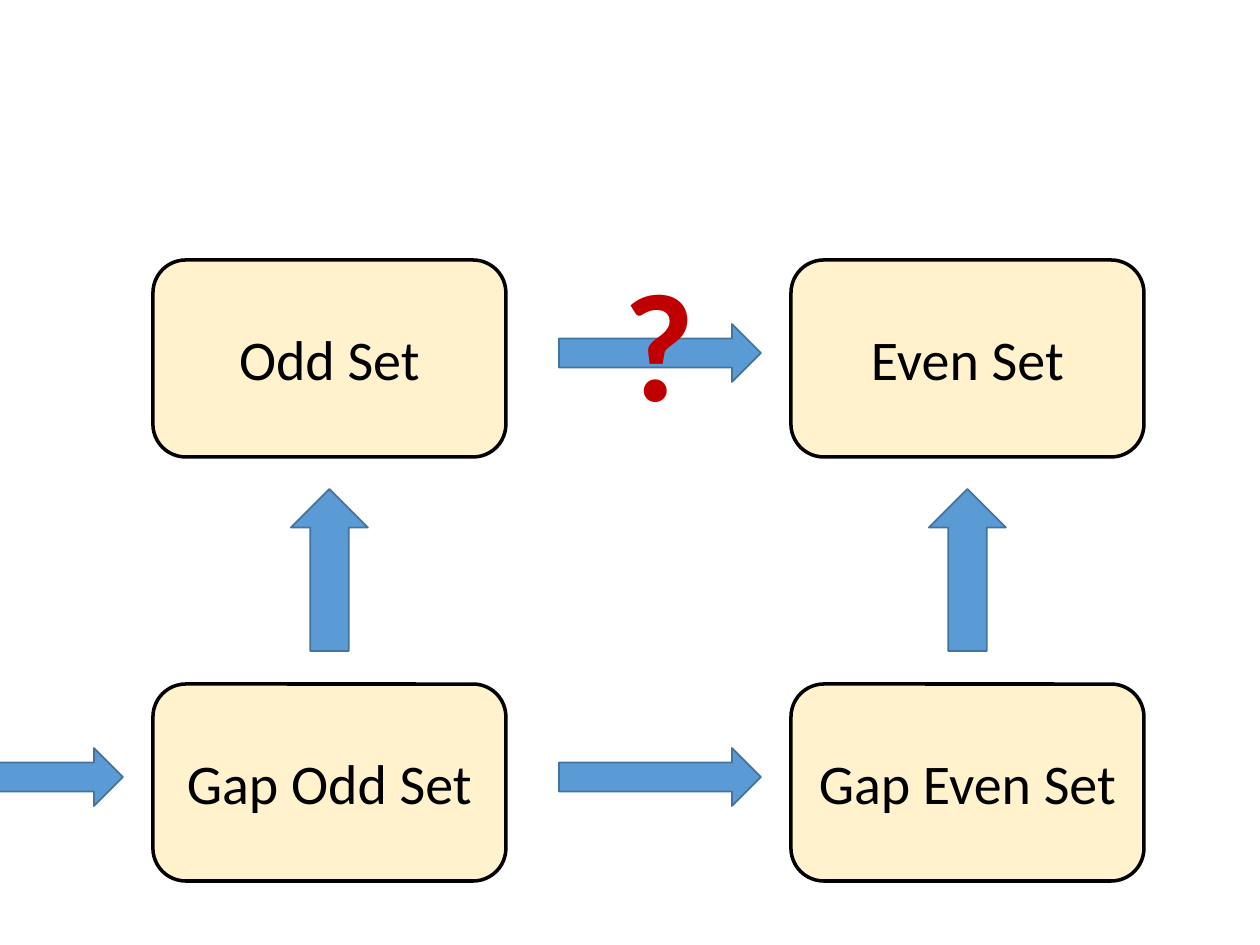
from dataclasses import dataclass

from pptx import Presentation
from pptx.dml.color import RGBColor as Rgb
from pptx.enum.shapes import MSO_SHAPE as Kind
from pptx.enum.text import MSO_ANCHOR as Anchor, MSO_AUTO_SIZE as Fit, PP_ALIGN as Align
from pptx.shapes.autoshape import Shape
from pptx.slide import Slide
from pptx.util import Emu, Pt

SCALE = 914400 / 126  # EMU in one px
STEP_X, STEP_Y = 638, 424


@dataclass(frozen=True)
class Theme:
    font: str = "Calibri"
    box: str = "FFF2CC"
    edge: str = "000000"
    ink: str = "000000"
    arrow: str = "5B9BD5"
    rim: str = "43739E"
    alert: str = "C00000"
    label: int = 32
    mark: int = 88


@dataclass(frozen=True)
class Rect:
    x: int
    y: int
    w: int
    h: int

    def at(self, col: int, row: int) -> "Rect":
        """Shift by whole grid steps."""
        return Rect(self.x + col * STEP_X, self.y + row * STEP_Y, self.w, self.h)

    def emu(self) -> list[Emu]:
        return [Emu(round(v * SCALE)) for v in (self.x, self.y, self.w, self.h)]


@dataclass(frozen=True)
class Node:
    text: str
    col: int
    row: int


THEME = Theme()
BOX = Rect(153, 260, 353, 197)
ACROSS = Rect(559, 324, 202, 58)
UP = Rect(291, 489, 77, 162)
MARK = Rect(611, 241, 97, 199)

NODES = (
    Node("Odd Set", 0, 0),
    Node("Even Set", 1, 0),
    Node("Gap Odd Set", 0, 1),
    Node("Gap Even Set", 1, 1),
)


def add_run(shape: Shape, text: str, size: int, color: str, bold: bool = False) -> None:
    run = shape.text_frame.paragraphs[0].add_run()
    run.text = text
    font = run.font
    font.name, font.size, font.bold = THEME.font, Pt(size), bold
    font.color.rgb = Rgb.from_string(color)


def add_form(slide: Slide, kind: Kind, rect: Rect, fill: str, line: str, width: int) -> Shape:
    form = slide.shapes.add_shape(kind, *rect.emu())
    form.shadow.inherit = False
    form.fill.solid()
    form.fill.fore_color.rgb = Rgb.from_string(fill)
    form.line.color.rgb = Rgb.from_string(line)
    form.line.width = Pt(width)
    return form


def add_node(slide: Slide, node: Node) -> None:
    rect = BOX.at(node.col, node.row)
    form = add_form(slide, Kind.ROUNDED_RECTANGLE, rect, THEME.box, THEME.edge, 2)
    form.text_frame.vertical_anchor = Anchor.MIDDLE
    form.text_frame.paragraphs[0].alignment = Align.CENTER
    add_run(form, node.text, THEME.label, THEME.ink)


def add_arrow(slide: Slide, kind: Kind, rect: Rect) -> None:
    add_form(slide, kind, rect, THEME.arrow, THEME.rim, 1)


def add_mark(slide: Slide) -> None:
    mark = slide.shapes.add_textbox(*MARK.emu())
    mark.text_frame.word_wrap = False
    mark.text_frame.auto_size = Fit.SHAPE_TO_FIT_TEXT
    add_run(mark, "?", THEME.mark, THEME.alert, bold=True)


def main() -> None:
    deck = Presentation()
    deck.slide_width, deck.slide_height = Rect(0, 0, 1260, 945).emu()[2:]
    slide = deck.slides.add_slide(deck.slide_layouts[6])
    for node in NODES:
        add_node(slide, node)
    for col, row in ((0, 0), (0, 1), (-1, 1)):
        add_arrow(slide, Kind.RIGHT_ARROW, ACROSS.at(col, row))
    for col in range(2):
        add_arrow(slide, Kind.UP_ARROW, UP.at(col, 0))
    add_mark(slide)
    deck.save("out.pptx")


if __name__ == "__main__":
    main()
